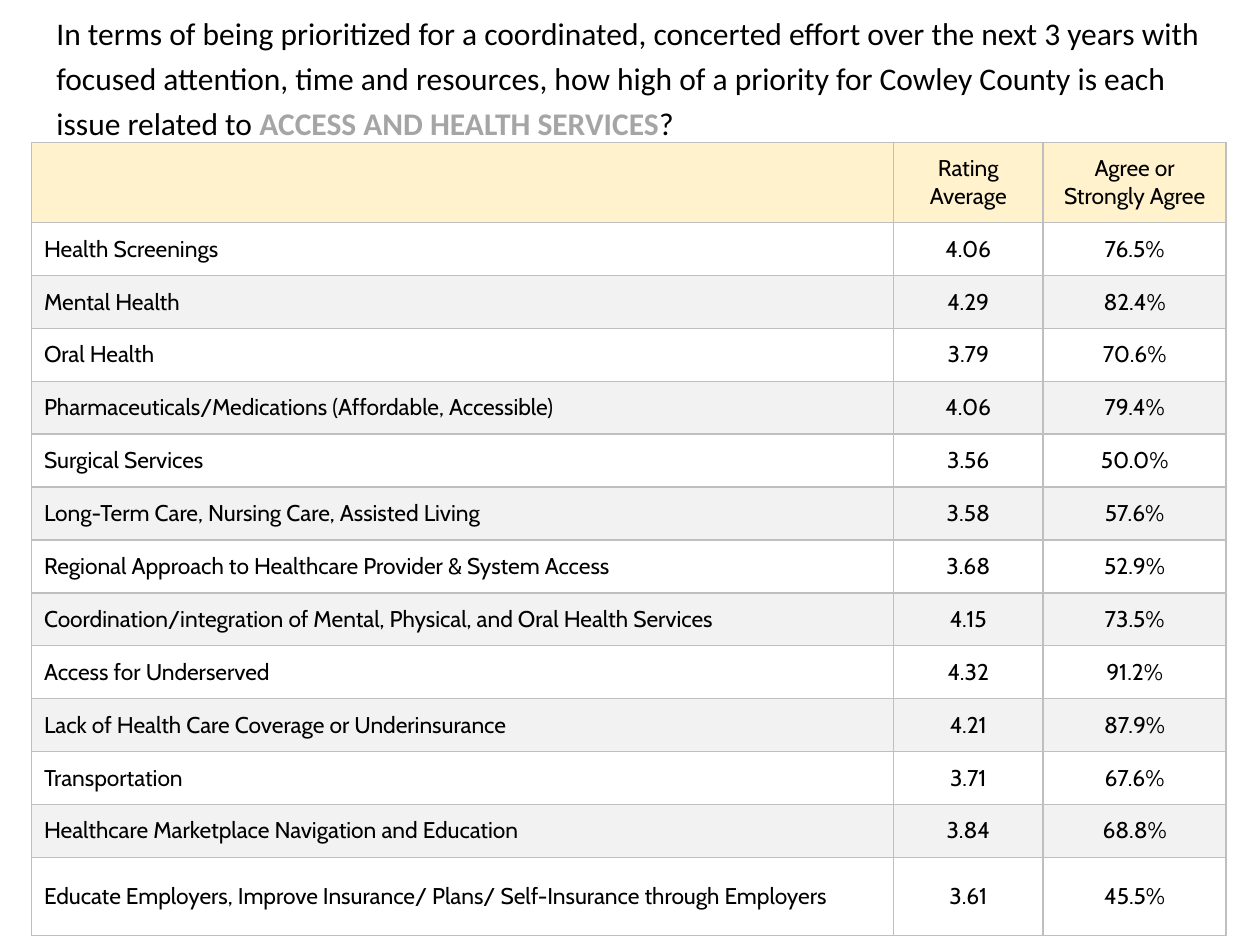
from lxml.etree import SubElement
from pptx import Presentation
from pptx.dml.color import RGBColor
from pptx.enum.text import MSO_ANCHOR as Anchor, PP_ALIGN as Align
from pptx.oxml.ns import qn
from pptx.util import Inches, Pt

COLORS = {"text": "000000", "topic": "A5A5A5", "header": "FFF2CC",
          "band": "F2F2F2", "border": "BFBFBF"}
COLUMNS = [6.84, 1.19, 1.45]
HEADER_ROW, BODY_ROW, LAST_ROW = 0.63, 0.42, 0.62
ROWS = [
    ("", "Rating Average", "Agree or Strongly Agree"),
    ("Health Screenings", "4.06", "76.5%"),
    ("Mental Health", "4.29", "82.4%"),
    ("Oral Health", "3.79", "70.6%"),
    ("Pharmaceuticals/Medications (Affordable, Accessible)", "4.06", "79.4%"),
    ("Surgical Services", "3.56", "50.0%"),
    ("Long-Term Care, Nursing Care, Assisted Living", "3.58", "57.6%"),
    ("Regional Approach to Healthcare Provider & System Access", "3.68", "52.9%"),
    ("Coordination/integration of Mental, Physical, and Oral Health Services",
     "4.15", "73.5%"),
    ("Access for Underserved", "4.32", "91.2%"),
    ("Lack of Health Care Coverage or Underinsurance", "4.21", "87.9%"),
    ("Transportation", "3.71", "67.6%"),
    ("Healthcare Marketplace Navigation and Education", "3.84", "68.8%"),
    ("Educate Employers, Improve Insurance/ Plans/ Self-Insurance through Employers",
     "3.61", "45.5%"),
]


def add_text(para, text, font="Cabin", size=13, color="text", bold=False):
    span = para.add_run()
    span.text = text
    span.font.name, span.font.size, span.font.bold = font, Pt(size), bold
    span.font.color.rgb = RGBColor.from_string(COLORS[color])


def add_borders(cell):
    props = cell._tc.get_or_add_tcPr()
    for index, side in enumerate(("a:lnL", "a:lnR", "a:lnT", "a:lnB")):
        line = props.makeelement(qn(side), {"w": str(Pt(1))})
        props.insert(index, line)  # borders come before the fill
        fill = SubElement(line, qn("a:solidFill"))
        SubElement(fill, qn("a:srgbClr"), val=COLORS["border"])


deck = Presentation()
deck.slide_width, deck.slide_height = Inches(10), Inches(7.5)
page = deck.slides.add_slide(deck.slide_layouts[6])

# Ratings table
heights = [HEADER_ROW] + [BODY_ROW] * (len(ROWS) - 2) + [LAST_ROW]
table = page.shapes.add_table(
    len(ROWS), len(COLUMNS), Inches(0.25), Inches(1.13),
    Inches(sum(COLUMNS)), Inches(sum(heights))).table
table.first_row = table.horz_banding = False
for column, width in zip(table.columns, COLUMNS):
    column.width = Inches(width)
for row, height in zip(table.rows, heights):
    row.height = Inches(height)

for r, values in enumerate(ROWS):
    for c, value in enumerate(values):
        cell = table.cell(r, c)
        cell.vertical_anchor = Anchor.MIDDLE
        cell.margin_left = cell.margin_right = Inches(0.1)
        cell.margin_top = cell.margin_bottom = Inches(0.1)
        if r % 2 and r > 0:
            cell.fill.background()
        else:
            cell.fill.solid()
            shade = COLORS["band" if r else "header"]
            cell.fill.fore_color.rgb = RGBColor.from_string(shade)
        add_borders(cell)
        para = cell.text_frame.paragraphs[0]
        para.alignment = Align.CENTER if c else Align.LEFT
        if value:
            add_text(para, value)

# Survey question
box = page.shapes.add_textbox(Inches(0.35), 0, Inches(9.33), Inches(1.26))
box.text_frame.word_wrap = True
para = box.text_frame.paragraphs[0]
para.line_spacing = 1.2
question = {"font": "Calibri", "size": 18}
add_text(para, "In terms of being prioritized for a coordinated, concerted effort "
         "over the next 3 years with focused attention, time and resources, how high "
         "of a priority for Cowley County is each issue related to ", **question)
add_text(para, "ACCESS AND HEALTH SERVICES", color="topic", bold=True, **question)
add_text(para, "?", **question)

deck.save("out.pptx")
